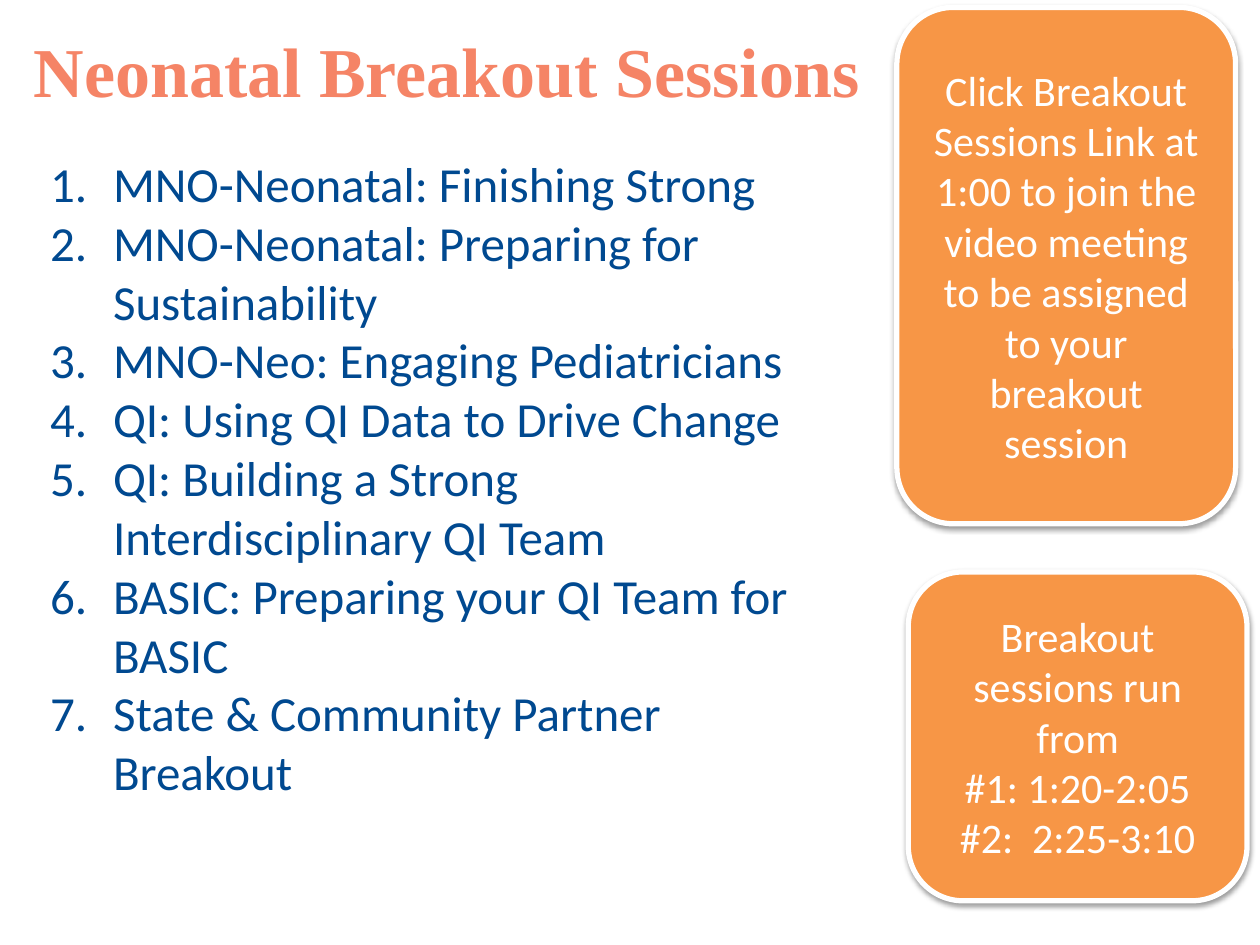
import pptx
import pptx.dml.color
import pptx.enum.shapes
import pptx.enum.text
import pptx.oxml
import pptx.oxml.ns
import pptx.util

Cm, Pt = pptx.util.Cm, pptx.util.Pt
ALIGN, ANCHOR = pptx.enum.text.PP_ALIGN, pptx.enum.text.MSO_ANCHOR

TITLE = "Neonatal Breakout Sessions"
SESSIONS = [
    "MNO-Neonatal: Finishing Strong",
    "MNO-Neonatal: Preparing for Sustainability",
    "MNO-Neo: Engaging Pediatricians",
    "QI: Using QI Data to Drive Change",
    "QI: Building a Strong Interdisciplinary QI Team",
    "BASIC: Preparing your QI Team for BASIC",
    "State & Community Partner Breakout",
]
CALLOUTS = [
    ((18.08, 0.15, 6.83, 10.41), [
        "Click Breakout Sessions Link at 1:00 to join the video meeting "
        "to be assigned to your breakout session"]),
    ((18.31, 11.53, 6.83, 6.63), [
        "Breakout sessions run from", "#1: 1:20-2:05", "#2:  2:25-3:10"]),
]
TITLE_BOX = (0.43, 0.43, 19.69, 3.18)
LIST_BOX = (0.76, 2.97, 16.21, 13.41)
BLUE, CORAL, ORANGE, WHITE = "004990", "F58466", "F79646", "FFFFFF"
TITLE_FONT = {"name": "Times New Roman", "size": Pt(40), "bold": True}
LIST_FONT = {"name": "Calibri", "size": Pt(28)}
CALLOUT_FONT = {"name": "Calibri", "size": Pt(24)}
NS = pptx.oxml.ns.nsdecls("a")
NUMBERING = [
    f'<a:buClr {NS}><a:srgbClr val="{BLUE}"/></a:buClr>',
    f'<a:buFont {NS} typeface="+mj-lt"/>',
    f'<a:buAutoNum {NS} type="arabicPeriod"/>',
]
SHADOW = (f'<a:effectLst {NS}><a:outerShdw blurRad="{Pt(3.1)}" dist="{Pt(1.6)}" '
          'dir="5400000" rotWithShape="0"><a:srgbClr val="000000">'
          '<a:alpha val="38000"/></a:srgbClr></a:outerShdw></a:effectLst>')


def rgb(value):
    return pptx.dml.color.RGBColor.from_string(value)


def write(tf, lines, font, color, align, anchor, numbered=False):
    """Fill a text frame with one formatted paragraph per line."""
    tf.word_wrap = True
    tf.auto_size = pptx.enum.text.MSO_AUTO_SIZE.NONE
    tf.vertical_anchor = anchor
    for i, line in enumerate(lines):
        p = tf.add_paragraph() if i else tf.paragraphs[0]
        p.alignment = align
        if numbered:
            pPr = p._p.get_or_add_pPr()
            pPr.set("marL", str(Cm(1.27)))
            pPr.set("indent", str(-Cm(1.27)))
            for xml in NUMBERING:
                pPr.append(pptx.oxml.parse_xml(xml))
        r = p.add_run()
        r.text = line
        for name, value in font.items():
            setattr(r.font, name, value)
        r.font.color.rgb = rgb(color)


def add_callout(s, box, lines):
    sp = s.shapes.add_shape(
        pptx.enum.shapes.MSO_SHAPE.ROUNDED_RECTANGLE, *map(Cm, box))
    sp.fill.solid()
    sp.fill.fore_color.rgb = rgb(ORANGE)
    sp.line.color.rgb = rgb(WHITE)
    sp.line.width = Pt(3)
    sp._element.spPr.append(pptx.oxml.parse_xml(SHADOW))
    write(sp.text_frame, lines, CALLOUT_FONT, WHITE, ALIGN.CENTER, ANCHOR.MIDDLE)


def main():
    prs = pptx.Presentation()
    prs.slide_width, prs.slide_height = Cm(25.4), Cm(19.05)
    s = prs.slides.add_slide(prs.slide_layouts[5])
    title = s.shapes.title
    title.left, title.top, title.width, title.height = map(Cm, TITLE_BOX)
    write(title.text_frame, [TITLE], TITLE_FONT, CORAL, ALIGN.LEFT, ANCHOR.TOP)
    sessions = s.shapes.add_textbox(*map(Cm, LIST_BOX))
    write(sessions.text_frame, SESSIONS, LIST_FONT, BLUE, ALIGN.LEFT, ANCHOR.TOP,
          numbered=True)
    for box, lines in CALLOUTS:
        add_callout(s, box, lines)
    prs.save("out.pptx")


if __name__ == "__main__":
    main()
